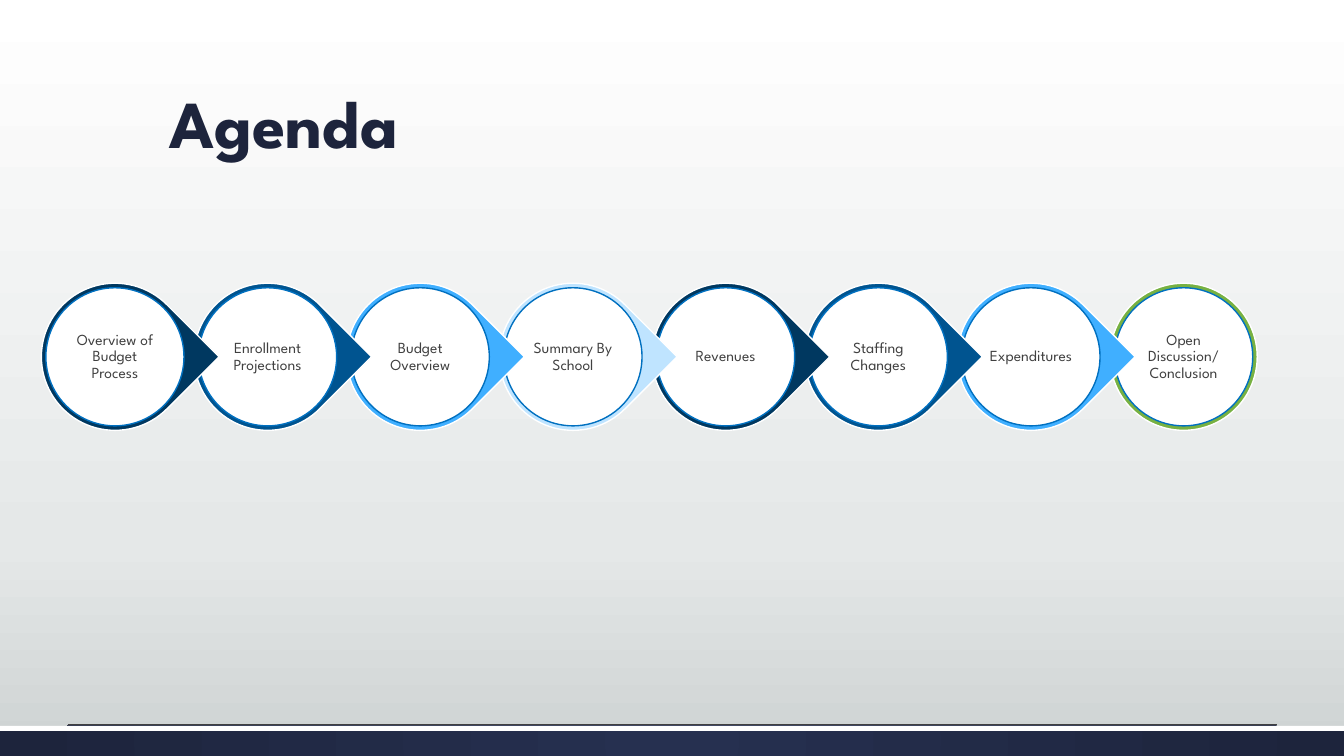
from dataclasses import dataclass

from lxml.etree import SubElement
from pptx import Presentation
from pptx.dml.color import RGBColor
from pptx.enum.shapes import MSO_CONNECTOR, MSO_SHAPE
from pptx.enum.text import MSO_ANCHOR, MSO_AUTO_SIZE, PP_ALIGN
from pptx.oxml.ns import qn
from pptx.util import Emu, Pt

# Content
TITLE = "Agenda"
STEPS = [
    "Overview of Budget Process",
    "Enrollment Projections",
    "Budget Overview",
    "Summary By School",
    "Revenues",
    "Staffing Changes",
    "Expenditures",
    "Open Discussion/ Conclusion",
]


@dataclass(frozen=True)
class Theme:
    font: str = "League Spartan"
    head: int = 48
    body: int = 11
    navy: str = "1D243C"
    text: str = "404040"
    white: str = "FFFFFF"
    ring: str = "0070C0"
    last: str = "77B142"
    rule: str = "404040"
    drops: tuple = ("003860", "005490", "40AFFF", "BFE4FF")
    back: tuple = ((0, "FFFFFF"), (72, "E5E8E8"), (100, "CDD2D2"))
    foot: tuple = ((0, "263050"), (100, "1D243C"))


THEME = Theme()

# Layout in px, 100 to the inch
PX = 9144
WIDE, HIGH = 1333, 750
LEFT, RIGHT, TOP = 41, 1101, 281
DROP, DISC, LABEL = 146, 137, 98
PITCH = (RIGHT - LEFT) / (len(STEPS) - 1)


def px(*sizes):
    return [Emu(round(size * PX)) for size in sizes]


def rgb(code):
    return RGBColor.from_string(code)


def blend(fill, root, stops, round_=False):
    """Give a fill its colour stops, running down or out from the centre."""
    fill.gradient()
    grad = next(root.iter(qn("a:gradFill")))
    for part in list(grad):
        grad.remove(part)
    group = SubElement(grad, qn("a:gsLst"))
    for place, code in stops:
        stop = SubElement(group, qn("a:gs"), pos=str(place * 1000))
        SubElement(stop, qn("a:srgbClr"), val=code)
    if round_:
        track = SubElement(grad, qn("a:path"), path="circle")
        SubElement(track, qn("a:fillToRect"), l="50000", t="50000", r="50000", b="50000")
    else:
        SubElement(grad, qn("a:lin"), ang="5400000", scaled="0")


def draw(shapes, kind, box, fill, line=None):
    shape = shapes.add_shape(kind, *px(*box))
    shape.shadow.inherit = False
    shape.fill.solid()
    shape.fill.fore_color.rgb = rgb(fill)
    if line:
        shape.line.color.rgb = rgb(line)
        shape.line.width = Pt(1)
    else:
        shape.line.fill.background()
    return shape


def write(frame, text, size, color, align, anchor, bold=False):
    frame.word_wrap = True
    frame.auto_size = MSO_AUTO_SIZE.NONE
    frame.vertical_anchor = anchor
    frame.text = text
    para = frame.paragraphs[0]
    para.alignment = align
    para.line_spacing = 0.9
    font = para.font
    font.name, font.size, font.bold = THEME.font, Pt(size), bold
    font.color.rgb = rgb(color)


def inset(left, size):
    """Centre a square of this size in the step that starts at left."""
    gap = (DROP - size) / 2
    return left + gap, TOP + gap, size, size


def add_step(shapes, index, text):
    left = LEFT + index * PITCH
    final = index == len(STEPS) - 1
    group = shapes.add_group_shape().shapes
    kind = MSO_SHAPE.OVAL if final else MSO_SHAPE.TEAR
    color = THEME.last if final else THEME.drops[index % len(THEME.drops)]
    drop = draw(group, kind, inset(left, DROP), color, THEME.white)
    drop.rotation = 0 if final else 45
    draw(group, MSO_SHAPE.OVAL, inset(left, DISC), THEME.white, THEME.ring)
    frame = group.add_textbox(*px(*inset(left, LABEL))).text_frame
    frame.margin_left, frame.margin_top, frame.margin_right, frame.margin_bottom = px(2, 2, 2, 2)
    write(frame, text, THEME.body, THEME.text, PP_ALIGN.CENTER, MSO_ANCHOR.MIDDLE)


def main():
    deck = Presentation()
    deck.slide_width, deck.slide_height = px(WIDE, HIGH)
    slide = deck.slides.add_slide(deck.slide_layouts[5])
    shapes = slide.shapes
    blend(slide.background.fill, slide.element, THEME.back)

    # Footer band and rule
    band = draw(shapes, MSO_SHAPE.RECTANGLE, (0, 720, WIDE, 30), THEME.navy)
    blend(band.fill, band.element, THEME.foot, True)
    draw(shapes, MSO_SHAPE.RECTANGLE, (0, 720, WIDE, 5), THEME.white)
    rule = shapes.add_connector(MSO_CONNECTOR.STRAIGHT, *px(67, 719, 1267, 719))
    rule.line.color.rgb = rgb(THEME.rule)
    rule.line.width = Pt(0.5)
    SubElement(rule.element.spPr, qn("a:effectLst"))

    # Title
    title = shapes.title
    title.left, title.top, title.width, title.height = px(158, 50, 1040, 117)
    write(title.text_frame, TITLE, THEME.head, THEME.navy,
          PP_ALIGN.LEFT, MSO_ANCHOR.BOTTOM, True)

    # Steps, last one at the back
    for index, text in reversed(list(enumerate(STEPS))):
        add_step(shapes, index, text)

    deck.save("out.pptx")


if __name__ == "__main__":
    main()
